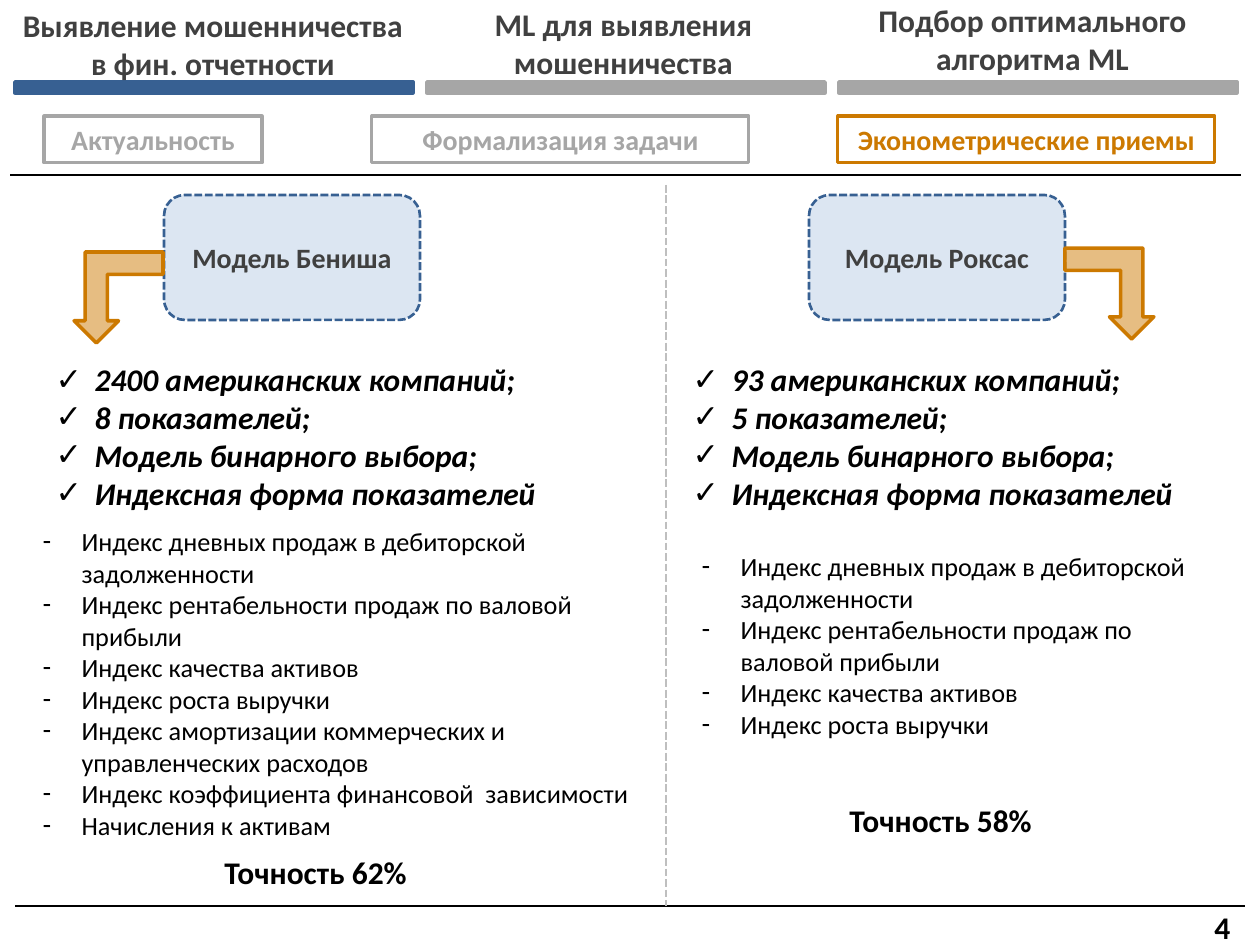
"""Build a slide comparing the Beneish and Roxas fraud detection models."""
from lxml.etree import SubElement
from pptx import Presentation
from pptx.dml.color import RGBColor
from pptx.enum.dml import MSO_LINE as Dash
from pptx.enum.shapes import MSO_CONNECTOR as Conn, MSO_SHAPE as Shape
from pptx.enum.text import MSO_ANCHOR as Anchor, MSO_AUTO_SIZE as AutoSize, PP_ALIGN as Align
from pptx.oxml.ns import qn
from pptx.util import Emu, Pt

BLACK = RGBColor(0x00, 0x00, 0x00)
DARK = RGBColor(0x40, 0x40, 0x40)
GRAY = RGBColor(0xA6, 0xA6, 0xA6)
SILVER = RGBColor(0xBF, 0xBF, 0xBF)
BLUE = RGBColor(0x37, 0x60, 0x92)
PALE = RGBColor(0x95, 0xB3, 0xD7)
ORANGE = RGBColor(0xCC, 0x79, 0x00)

HEADINGS = [
    ("Выявление мошенничества в фин. отчетности", (0, 0, 426, 90), BLUE),
    ("ML для выявления мошенничества", (415, -1, 417, 90), GRAY),
    ("Подбор оптимального алгоритма ML", (824, -5, 417, 90), GRAY),
]
STEPS = [
    ("Актуальность", 44, 218, GRAY),
    ("Формализация задачи", 372, 377, GRAY),
    ("Эконометрические приемы", 838, 377, ORANGE),
]
COMMON_FACTS = ["Модель бинарного выбора;", "Индексная форма показателей"]
RECEIVABLES = "Индекс дневных продаж в дебиторской задолженности"
COMMON_INDICES = [
    RECEIVABLES,
    "Индекс рентабельности продаж по валовой прибыли",
    "Индекс качества активов",
    "Индекс роста выручки",
]
MODELS = [
    {
        "name": "Модель Бениша", "card_x": 164, "arrow": (74, 252, 89, 91), "flip": False,
        "facts": ["2400 американских компаний;", "8 показателей;"] + COMMON_FACTS,
        "facts_box": (43, 354, 546, 165),
        "indices": COMMON_INDICES + [
            "Индекс амортизации коммерческих и управленческих расходов",
            "Индекс коэффициента финансовой  зависимости",
            "Начисления к активам",
        ],
        "indices_box": (30, 519, 659, 331),
        "accuracy": "Точность 62%", "accuracy_box": (212, 847, 239, 50),
    },
    {
        "name": "Модель Роксас", "card_x": 809, "arrow": (1065, 248, 89, 91), "flip": True,
        "facts": ["93 американских компаний;", "5 показателей;"] + COMMON_FACTS,
        "facts_box": (680, 354, 546, 165),
        "indices": COMMON_INDICES,
        "indices_box": (689, 544, 546, 204),
        "accuracy": "Точность 58%", "accuracy_box": (837, 795, 249, 50),
    },
]
LINES = [
    ((1241, 175), (10, 175), BLACK, None),
    ((1245, 906), (15, 906), BLACK, None),
    ((666, 185), (666, 906), SILVER, Dash.SQUARE_DOT),
]
BAR_X, BAR_STEP = 15, 412


def px(n):
    return Emu(round(n * 914400 / 126))


def write(sp, lines, size=18, color=BLACK, bold=False, italic=False,
          align=Align.LEFT, anchor=Anchor.TOP, bullet=None):
    tf = sp.text_frame
    tf.word_wrap = True
    tf.auto_size = AutoSize.NONE
    tf.vertical_anchor = anchor
    for i, line in enumerate(lines):
        p = tf.add_paragraph() if i else tf.paragraphs[0]
        p.alignment = align
        p.space_before = Pt(0)
        r = p.add_run()
        r.text = line
        font = r.font
        font.name, font.size, font.bold, font.italic = "Calibri", Pt(size), bold, italic
        font.color.rgb = color
        if bullet:
            pPr = p._p.get_or_add_pPr()
            pPr.set("marL", str(px(39)))
            pPr.set("indent", str(-px(39)))
            SubElement(pPr, qn("a:buChar"), char=bullet)


def place(sp, box):
    sp.left, sp.top, sp.width, sp.height = map(px, box)
    tree = sp._element.getparent()
    tree.append(sp._element)
    return sp


def add_text(s, box, *args, **fmt):
    write(s.shapes.add_textbox(*map(px, box)), *args, **fmt)


def add_box(s, kind, box, line, width, fill=None, alpha=None, dash=None):
    sp = s.shapes.add_shape(kind, *map(px, box))
    sp.shadow.inherit = False
    sp.line.color.rgb = line
    sp.line.width = Pt(width)
    if dash:
        sp.line.dash_style = dash
    if fill is None:
        sp.fill.background()
    else:
        sp.fill.solid()
        sp.fill.fore_color.rgb = fill
    if alpha:
        clr = sp._element.spPr.find(qn("a:solidFill")).find(qn("a:srgbClr"))
        SubElement(clr, qn("a:alpha"), val=str(alpha * 1000))
    return sp


def add_line(s, start, end, color, dash):
    c = s.shapes.add_connector(Conn.STRAIGHT, *map(px, start + end))
    c.line.color.rgb = color
    c.line.width = Pt(1.5)
    if dash:
        c.line.dash_style = dash
    SubElement(c._element.spPr, qn("a:effectLst"))


def add_model(s, model, facts, indices):
    card = add_box(s, Shape.ROUNDED_RECTANGLE, (model["card_x"], 195, 256, 125), BLUE, 1.5,
                   PALE, 32, Dash.SQUARE_DOT)
    write(card, [model["name"]], size=16, color=DARK, bold=True,
          align=Align.CENTER, anchor=Anchor.MIDDLE)
    arrow = add_box(s, Shape.BENT_UP_ARROW, model["arrow"], ORANGE, 2, ORANGE, 49)
    arrow.rotation = 180
    if model["flip"]:
        arrow._element.spPr.find(qn("a:xfrm")).set("flipH", "1")
    write(place(facts, model["facts_box"]), model["facts"], bold=True, italic=True, bullet="✓")
    write(place(indices, model["indices_box"]), model["indices"], size=15, bullet="-")
    add_text(s, model["accuracy_box"], [model["accuracy"]], bold=True)


def main():
    prs = Presentation()
    prs.slide_width, prs.slide_height = px(1260), px(945)
    s = prs.slides.add_slide(prs.slide_layouts[4])
    title, *bodies = s.placeholders

    for i, (text, box, color) in enumerate(HEADINGS):
        add_box(s, Shape.RECTANGLE, (BAR_X + i * BAR_STEP, 82, 398, 11), color, 2, color)
        fmt = dict(color=DARK, bold=True, align=Align.CENTER)
        if i == 0:
            write(place(title, box), [text], **fmt)
        else:
            add_text(s, box, [text], **fmt)
    for text, x, width, color in STEPS:
        sp = add_box(s, Shape.RECTANGLE, (x, 116, width, 47), color, 1.75)
        write(sp, [text], size=16, color=color, bold=True, align=Align.CENTER)
    for line in LINES:
        add_line(s, *line)
    for i, model in enumerate(MODELS):
        add_model(s, model, *bodies[2 * i:2 * i + 2])
    add_text(s, (1202, 902, 48, 50), ["4"], bold=True)
    prs.save("out.pptx")


if __name__ == "__main__":
    main()
